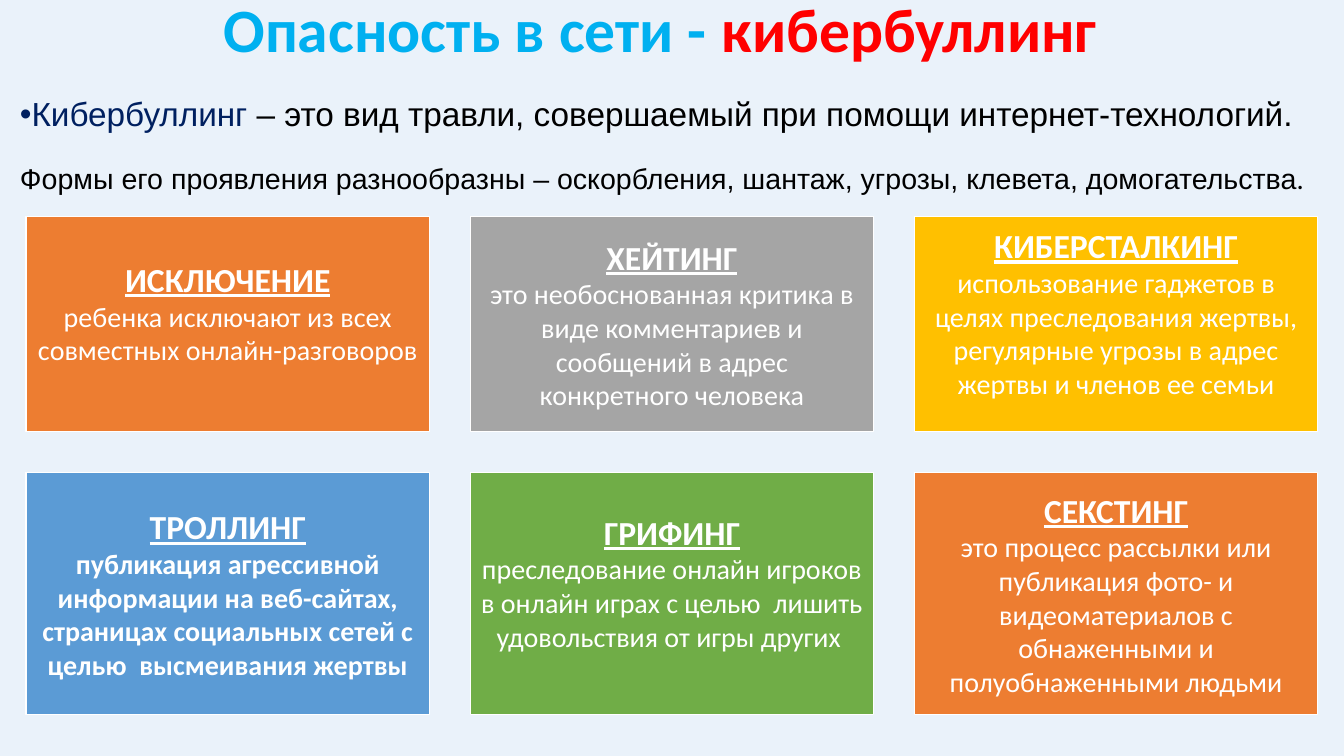
from lxml import etree
from pptx import Presentation
from pptx.dml.color import RGBColor
from pptx.enum.shapes import MSO_SHAPE
from pptx.enum.text import MSO_ANCHOR, MSO_AUTO_SIZE, PP_ALIGN
from pptx.oxml.ns import qn
from pptx.util import Inches, Pt

CENTER = PP_ALIGN.CENTER
MIDDLE = MSO_ANCHOR.MIDDLE
RECTANGLE = MSO_SHAPE.RECTANGLE

COLORS = {
    "background": "EAF2FA", "sky": "00B0F0", "red": "FF0000", "navy": "002060",
    "black": "000000", "white": "FFFFFF", "orange": "ED7D31", "gray": "A5A5A5",
    "gold": "FFC000", "blue": "5B9BD5", "green": "70AD47",
}


def color(name):
    return RGBColor.from_string(COLORS[name])


def add_run(paragraph, text, size, color_name, font="Calibri", bold=False, underline=False):
    run = paragraph.add_run()
    run.text = text
    run.font.name = font
    run.font.size = Pt(size)
    run.font.bold = bold
    run.font.underline = underline
    run.font.color.rgb = color(color_name)


presentation = Presentation()
presentation.slide_width = Inches(13.33)
presentation.slide_height = Inches(7.5)
slide = presentation.slides.add_slide(presentation.slide_layouts[5])
slide.background.fill.solid()
slide.background.fill.fore_color.rgb = color("background")

# Title
title = slide.shapes.title
title.left, title.top = Inches(1.95), Inches(0.09)
title.width, title.height = Inches(9.2), Inches(0.46)
title.text_frame.auto_size = MSO_AUTO_SIZE.NONE
title.text_frame.vertical_anchor = MIDDLE
heading = title.text_frame.paragraphs[0]
heading.alignment = CENTER
heading.line_spacing = 0.9
add_run(heading, "Опасность в сети - ", 44, "sky", bold=True)
add_run(heading, "кибербуллинг", 44, "red", bold=True)

# Definition and forms
intro = slide.shapes.add_textbox(Inches(0.1), Inches(0.84), Inches(13.24), Inches(1.25))
intro.text_frame.word_wrap = True
definition = intro.text_frame.paragraphs[0]
definition.line_spacing = 1.1
add_run(definition, "Кибербуллинг", 23.8, "navy", "Arial")
add_run(definition, " – это вид травли, совершаемый при помощи интернет-технологий.",
        23.8, "black", "Arial")
properties = definition._p.get_or_add_pPr()
properties.set("marL", "0")
properties.set("indent", str(-Inches(0.25)))
etree.SubElement(properties, qn("a:buFont")).set("typeface", "Arial")
etree.SubElement(properties, qn("a:buChar")).set("char", "•")

forms = intro.text_frame.add_paragraph()
forms.line_spacing = 1.1
forms.space_before = Pt(17)
add_run(forms, "Формы его проявления разнообразны – оскорбления, шантаж, угрозы, "
               "клевета, домогательства", 20.4, "black", "Arial")
add_run(forms, ".", 20.4, "black")

# Cards: name, description, fill, bold description, extra space below the text
CARD_ROWS = [
    (2.15, 2.13, [
        ("ИСКЛЮЧЕНИЕ", "ребенка исключают из всех совместных онлайн-разговоров",
         "orange", False, 0.23),
        ("ХЕЙТИНГ", "это необоснованная критика в виде комментариев и сообщений "
         "в адрес конкретного человека", "gray", False, 0),
        ("КИБЕРСТАЛКИНГ", "использование гаджетов в целях преследования жертвы, "
         "регулярные угрозы в адрес жертвы и членов ее семьи", "gold", False, 0.23),
    ]),
    (4.69, 2.4, [
        ("ТРОЛЛИНГ", "публикация агрессивной информации на веб-сайтах, страницах "
         "социальных сетей с целью  высмеивания жертвы", "blue", True, 0),
        ("ГРИФИНГ", "преследование онлайн игроков в онлайн играх с целью  лишить "
         "удовольствия от игры других ", "green", False, 0.23),
        ("СЕКСТИНГ", "это процесс рассылки или публикация фото- и видеоматериалов "
         "с обнаженными и полуобнаженными людьми", "orange", False, 0),
    ]),
]
CARD_LEFT, CARD_WIDTH, CARD_STEP, CARD_INSET = 0.26, 4, 4.405, 0.1

for top, height, cards in CARD_ROWS:
    for column, (name, description, fill, bold, space_below) in enumerate(cards):
        card = slide.shapes.add_shape(
            RECTANGLE, Inches(CARD_LEFT + column * CARD_STEP), Inches(top),
            Inches(CARD_WIDTH), Inches(height))
        card.shadow.inherit = False
        card.fill.solid()
        card.fill.fore_color.rgb = color(fill)
        card.line.color.rgb = color("white")
        card.line.width = Pt(1)
        frame = card.text_frame
        frame.word_wrap = True
        frame.vertical_anchor = MIDDLE
        frame.margin_left = frame.margin_right = frame.margin_top = Inches(CARD_INSET)
        frame.margin_bottom = Inches(CARD_INSET + space_below)
        name_paragraph = frame.paragraphs[0]
        add_run(name_paragraph, name, 24, "white", bold=True, underline=True)
        description_paragraph = frame.add_paragraph()
        add_run(description_paragraph, description, 20, "white", bold=bold)
        name_paragraph.alignment = description_paragraph.alignment = CENTER

presentation.save("out.pptx")
